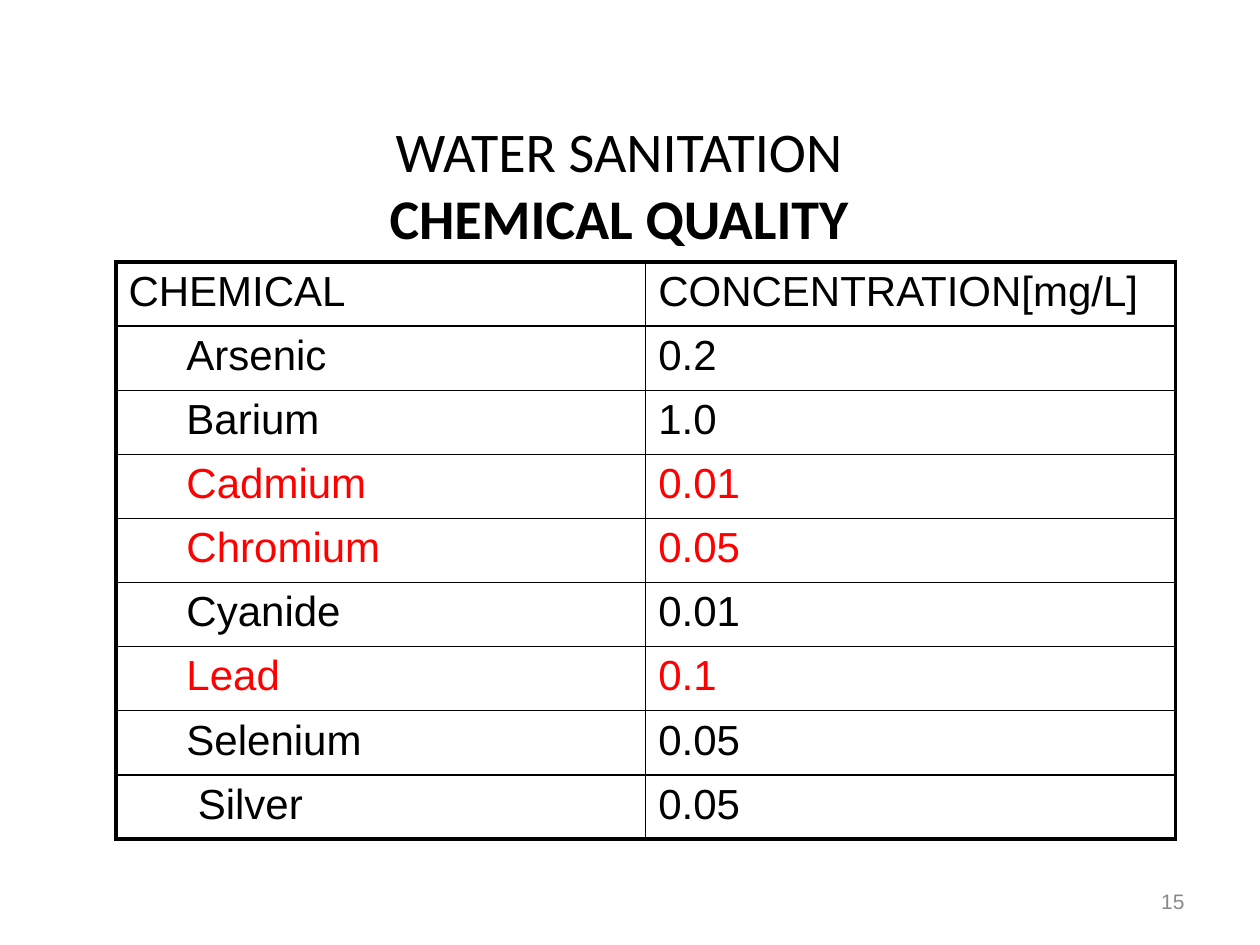
"""Build a slide with a table of chemical limits for drinking water."""
from pptx import Presentation
from pptx.dml.color import RGBColor
from pptx.enum import text
from pptx.oxml import parse_xml
from pptx.oxml.ns import nsdecls
from pptx.util import Inches, Pt

BLACK, RED, GREY = "000000", "FF0000", "898989"
THICK, THIN = Pt(2.25), Pt(1)
HEADINGS = ("CHEMICAL", "CONCENTRATION[mg/L]")
LIMITS = (
    ("Arsenic", "0.2", BLACK),
    ("Barium", "1.0", BLACK),
    ("Cadmium", "0.01", RED),
    ("Chromium", "0.05", RED),
    ("Cyanide", "0.01", BLACK),
    ("Lead", "0.1", RED),
    ("Selenium", "0.05", BLACK),
    ("Silver", "0.05", BLACK),
)


def style(font, name, size, colour):
    """Set the typeface, size and colour of a font."""
    font.name = name
    font.size = Pt(size)
    font.color.rgb = RGBColor.from_string(colour)


def set_borders(cell, widths):
    """Draw black cell borders from a mapping of side to width."""
    properties = cell._tc.get_or_add_tcPr()
    for position, (side, width) in enumerate(widths.items()):
        border = parse_xml(
            f'<a:ln{side} {nsdecls("a")} w="{width}"><a:solidFill>'
            f'<a:srgbClr val="{BLACK}"/></a:solidFill></a:ln{side}>')
        properties.insert(position, border)


def add_title(slide):
    """Place the two-line title with a bold second line."""
    title = slide.shapes.title
    title.left, title.top = Inches(0.58), Inches(0.83)
    title.width, title.height = Inches(8.67), Inches(1.25)
    frame = title.text_frame
    frame.text = "WATER SANITATION\vCHEMICAL QUALITY"
    frame.vertical_anchor = text.MSO_ANCHOR.MIDDLE
    heading = frame.paragraphs[0]
    heading.alignment = text.PP_ALIGN.CENTER
    for run in heading.runs:
        style(run.font, "Calibri", 32, BLACK)
    heading.runs[-1].font.bold = True


def fill_cell(cell, words, colour, indent):
    """Write one unfilled table cell."""
    cell.text = words
    cell.fill.background()
    cell.margin_left = Inches(indent)
    style(cell.text_frame.paragraphs[0].runs[0].font, "Arial", 24, colour)


def add_limits(slide):
    """Add the table of chemicals and their concentrations."""
    rows = ((*HEADINGS, BLACK),) + LIMITS
    last = len(rows) - 1
    table = slide.shapes.add_table(
        len(rows), 2, Inches(0.92), Inches(2.08),
        Inches(8.41), Inches(4.58)).table
    table.first_row = table.horz_banding = False
    for r, (chemical, concentration, colour) in enumerate(rows):
        indent = 0.1 if r == 0 else 0.65 if r == last else 0.56
        fill_cell(table.cell(r, 0), chemical, colour, indent)
        fill_cell(table.cell(r, 1), concentration, colour, 0.1)
        for c in range(2):
            set_borders(table.cell(r, c), {
                "L": THICK if c == 0 else THIN,
                "R": THICK if c == 1 else THIN,
                "T": THICK if r == 0 else THIN,
                "B": THICK if r == last else THIN,
            })


def add_page_number(slide):
    """Add the page number at the lower right."""
    frame = slide.shapes.add_textbox(
        Inches(7.17), Inches(6.95), Inches(2.33), Inches(0.4)).text_frame
    frame.word_wrap = True
    frame.vertical_anchor = text.MSO_ANCHOR.MIDDLE
    frame.text = "15"
    number = frame.paragraphs[0]
    number.alignment = text.PP_ALIGN.RIGHT
    style(number.runs[0].font, "Arial", 12, GREY)


def main():
    """Build and save the slide."""
    deck = Presentation()
    deck.slide_width, deck.slide_height = Inches(10), Inches(7.5)
    slide = deck.slides.add_slide(deck.slide_layouts[5])
    add_title(slide)
    add_limits(slide)
    add_page_number(slide)
    deck.save("out.pptx")


if __name__ == "__main__":
    main()
